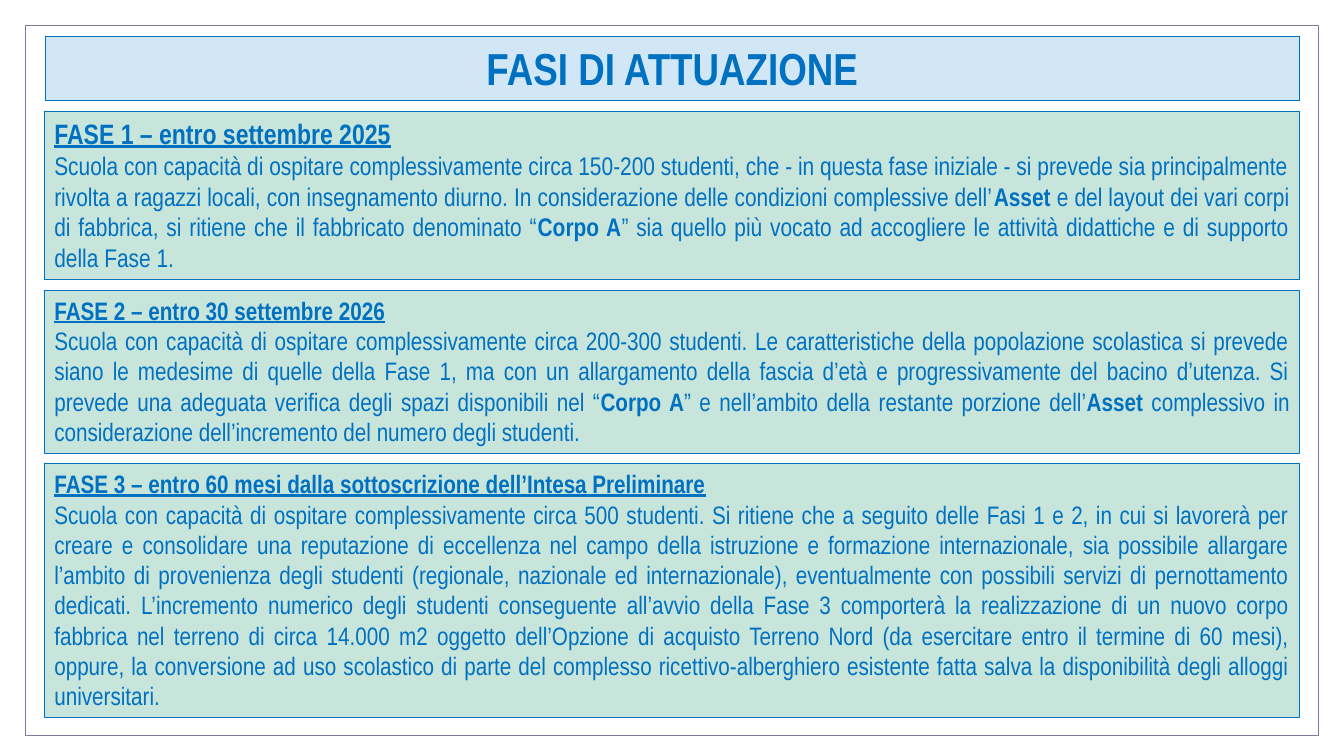
from pptx import Presentation, util as u
from pptx.dml.color import RGBColor
from pptx.enum import shapes, text

PX = 9144  # 100 px to the inch
FONT = "Arial Narrow"
BLUE = RGBColor(0x00, 0x70, 0xC0)
PALE_BLUE = RGBColor(0xD1, 0xE7, 0xF6)
PALE_GREEN = RGBColor(0xC8, 0xE5, 0xDC)
FRAME_GREY = RGBColor(0x7F, 0x7B, 0x9A)

PHASE_LEFT, PHASE_WIDTH = 44, 1245
ASSET, BUILDING = "Asset ", "Corpo A"
BOLD_TERMS = (ASSET, BUILDING)

# Each phase: top, height, heading, heading size, body size, body pieces
PHASES = [
    (111, 166, "FASE 1 – entro settembre 2025", 20, 18.2, [
        "Scuola con capacità di ospitare complessivamente circa 150-200 studenti, "
        "che - in questa fase iniziale - si prevede sia principalmente rivolta a "
        "ragazzi locali, con insegnamento diurno. In considerazione delle "
        "condizioni complessive dell’",
        ASSET,
        "e del layout dei vari corpi di fabbrica, si ritiene che il fabbricato "
        "denominato “",
        BUILDING,
        "” sia quello più vocato ad accogliere le attività didattiche e di "
        "supporto della Fase 1.",
    ]),
    (288, 162, "FASE 2 – entro 30 settembre 2026", 18, 18, [
        "Scuola con capacità di ospitare complessivamente circa 200-300 studenti. "
        "Le caratteristiche della popolazione scolastica si prevede siano le "
        "medesime di quelle della Fase 1, ma con un allargamento della fascia "
        "d’età e progressivamente del bacino d’utenza. Si prevede una adeguata "
        "verifica degli spazi disponibili nel “",
        BUILDING,
        "” e nell’ambito della restante porzione dell’",
        ASSET,
        "complessivo in considerazione dell’incremento del numero degli studenti.",
    ]),
    (460, 252, "FASE 3 – entro 60 mesi dalla sottoscrizione dell’Intesa Preliminare",
     18, 18, [
        "Scuola con capacità di ospitare complessivamente circa 500 studenti. Si "
        "ritiene che a seguito delle Fasi 1 e 2, in cui si lavorerà per creare e "
        "consolidare una reputazione di eccellenza nel campo della istruzione e "
        "formazione internazionale, sia possibile allargare l’ambito di "
        "provenienza degli studenti (regionale, nazionale ed internazionale), "
        "eventualmente con possibili servizi di pernottamento dedicati. ",
        "L’incremento numerico degli studenti conseguente all’avvio della Fase 3 "
        "comporterà la realizzazione di un nuovo corpo fabbrica nel terreno di "
        "circa 14.000 m2 oggetto dell’Opzione di acquisto Terreno Nord (da "
        "esercitare entro il termine di 60 mesi), oppure, la conversione ad uso "
        "scolastico di parte del complesso ricettivo-alberghiero esistente fatta "
        "salva la disponibilità degli alloggi universitari.",
    ]),
]


def add_panel(slide, box, fill, line, line_width):
    panel = slide.shapes.add_shape(
        shapes.MSO_SHAPE.RECTANGLE, *(length * PX for length in box))
    panel.shadow.inherit = False
    if fill is None:
        panel.fill.background()
    else:
        panel.fill.solid()
        panel.fill.fore_color.rgb = fill
    panel.line.color.rgb = line
    panel.line.width = u.Pt(line_width)
    panel.text_frame.word_wrap = True
    panel.text_frame.vertical_anchor = text.MSO_ANCHOR.TOP
    return panel


def style_run(run, size, bold, underline=False):
    run.font.name = FONT
    run.font.size = u.Pt(size)
    run.font.color.rgb = BLUE
    run.font.bold = bold
    run.font.underline = underline


def add_title(slide, box, wording):
    frame = add_panel(slide, box, PALE_BLUE, BLUE, 0.75).text_frame
    frame.auto_size = text.MSO_AUTO_SIZE.SHAPE_TO_FIT_TEXT
    frame.text = wording
    title = frame.paragraphs[0]
    title.alignment = text.PP_ALIGN.CENTER
    style_run(title.runs[0], 32, True)


def add_phase(slide, box, heading_text, heading_size, body_size, pieces):
    frame = add_panel(slide, box, PALE_GREEN, BLUE, 0.75).text_frame
    frame.auto_size = text.MSO_AUTO_SIZE.SHAPE_TO_FIT_TEXT
    # Underlined heading
    frame.text = heading_text
    heading = frame.paragraphs[0]
    heading.alignment = text.PP_ALIGN.LEFT
    style_run(heading.runs[0], heading_size, True, underline=True)
    # Justified description
    body = frame.add_paragraph()
    body.alignment = text.PP_ALIGN.JUSTIFY
    for piece in pieces:
        run = body.add_run()
        run.text = piece
        style_run(run, body_size, piece in BOLD_TERMS)


def main():
    deck = Presentation()
    deck.slide_width, deck.slide_height = 1333 * PX, 750 * PX
    slide = deck.slides.add_slide(deck.slide_layouts[6])

    # Page frame and title
    add_panel(slide, (25, 25, 1283, 705), None, FRAME_GREY, 0.5)
    add_title(slide, (45, 36, 1244, 64), "FASI DI ATTUAZIONE")

    # Phases from top to bottom
    for top, height, *content in PHASES:
        add_phase(slide, (PHASE_LEFT, top, PHASE_WIDTH, height), *content)

    deck.save("out.pptx")


if __name__ == "__main__":
    main()
